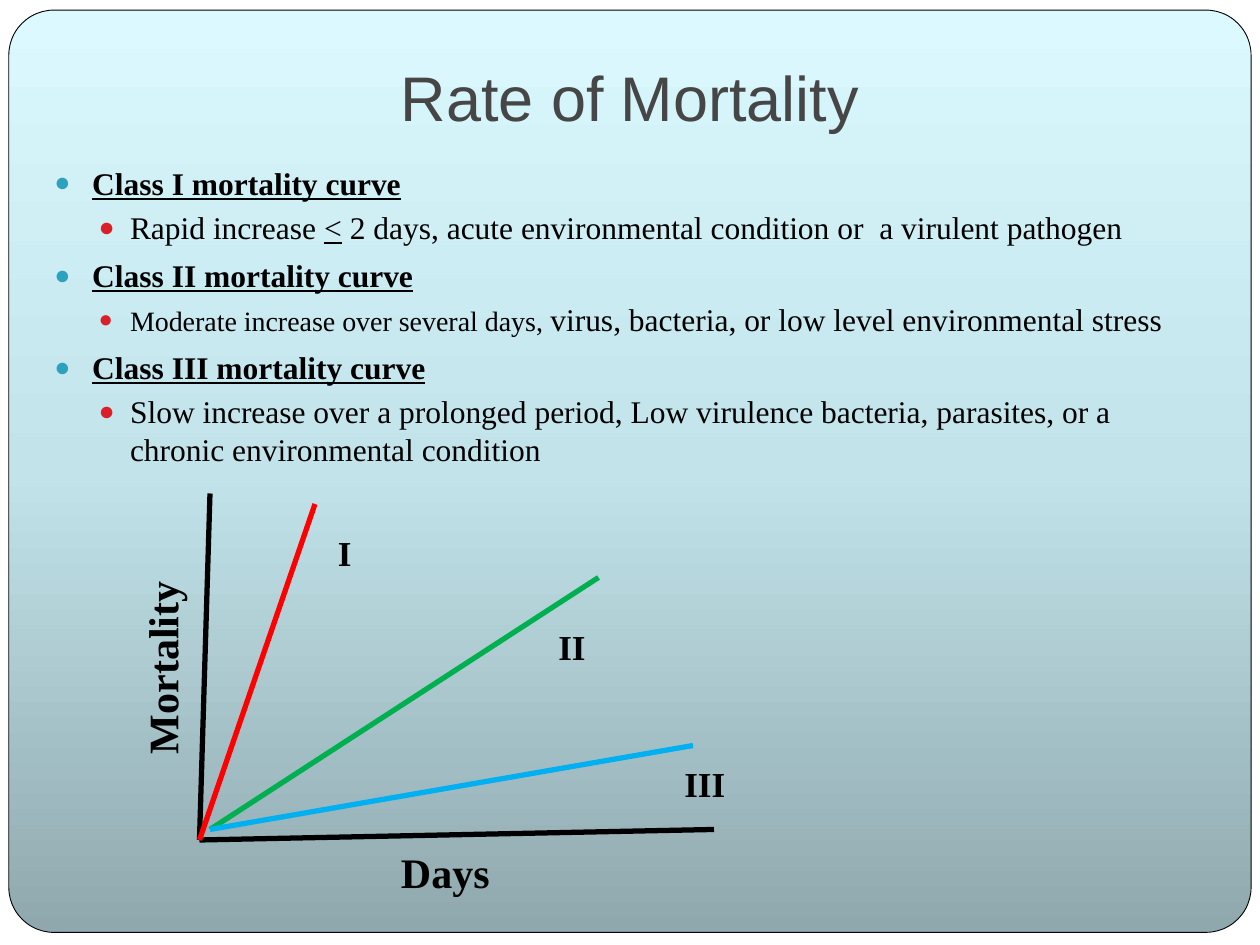
from copy import deepcopy

from lxml.etree import SubElement
from pptx import Presentation
from pptx.dml.color import RGBColor
from pptx.enum.shapes import MSO_CONNECTOR as Link, MSO_SHAPE as Shape
from pptx.enum.text import MSO_ANCHOR as Anchor, MSO_AUTO_SIZE as Auto, PP_ALIGN as Align
from pptx.oxml.ns import qn
from pptx.util import Emu, Inches, Pt

CELL = Inches(1) // 12
SERIF = "Times New Roman"
BLACK = "000000"
FADE = [(0, "8FA8AE"), (0.5, "C2E3EA"), (1, "DBF9FF")]
LEVELS = [(0.3, 0.3, 5.8, "2DA2BF"), (0.6, 0.25, 3.7, "DA1F28")]

NOTES = [
    ("Class I mortality curve",
     [("Rapid increase ", False, 18), ("<", True, 18),
      (" 2 days, acute environmental condition or  a virulent pathogen", False, 18)]),
    ("Class II mortality curve",
     [("Moderate increase over several days, ", False, 16),
      ("virus, bacteria, or low level environmental stress", False, 18)]),
    ("Class III mortality curve",
     [("Slow increase over a prolonged period, Low virulence bacteria, parasites, "
       "or a chronic environmental condition", False, 18)]),
]

LINES = [
    ((19, 80), (20, 47), BLACK),
    ((19, 80), (68, 79), BLACK),
    ((19, 80), (30, 48), "FF0000"),
    ((20, 79), (57, 55), "00B050"),
    ((20, 79), (66, 71), "00B0F0"),
]

LABELS = [
    ("I", (31, 50, 4, 5.3), 20, 0),
    ("II", (52, 59, 5, 5.3), 20, 0),
    ("III", (64, 72, 7, 5.3), 20, 0),
    ("Days", (37, 80, 14, 6), 24, 0),
    ("Mortality", (5.4, 60, 20, 6), 24, 270),
]


def paint(color, tone):
    color.rgb = RGBColor.from_string(tone)


def span(*cells):
    return [Emu(int(cell * CELL)) for cell in cells]


def style(font, size, name=SERIF, tone=BLACK, bold=False):
    font.size, font.name, font.bold = Pt(size), name, bold
    paint(font.color, tone)


def add_card(slide):
    card = slide.shapes.add_shape(
        Shape.ROUNDED_RECTANGLE, Inches(0.07), Inches(0.08), Inches(9.86), Inches(7.32))
    card.adjustments[0] = 0.049
    card.shadow.inherit = False
    paint(card.line.color, BLACK)
    card.line.width = Pt(0.5)
    card.fill.gradient()
    card.fill.gradient_angle = 90
    stops = card.element.spPr.find(".//" + qn("a:gsLst"))
    stops.append(deepcopy(stops[0]))
    for stop, (place, tone) in zip(card.fill.gradient_stops, FADE):
        stop.position = place
        paint(stop.color, tone)
    slide.shapes.element.insert(2, card.element)


def set_title(slide, text):
    title = slide.shapes.title
    title.left, title.top, title.width, title.height = span(8, 5, 104, 9)
    frame = title.text_frame
    frame.text = text
    frame.auto_size = Auto.NONE
    frame.vertical_anchor = Anchor.BOTTOM
    frame.margin_bottom = Inches(0.1)
    para = frame.paragraphs[0]
    para.alignment = Align.CENTER
    style(para.font, 36, "Arial", "464646")


def add_box(slide, cells):
    box = slide.shapes.add_textbox(*span(*cells))
    box.text_frame.word_wrap = True
    return box


def set_bullet(para, level):
    left, hang, gap, tone = LEVELS[level]
    para.level = level
    para.space_before = Pt(gap)
    props = para._p.get_or_add_pPr()
    props.set("marL", str(Inches(left)))
    props.set("indent", str(-Inches(hang)))
    SubElement(SubElement(props, qn("a:buClr")), qn("a:srgbClr"), val=tone)
    SubElement(props, qn("a:buSzPct"), val="85000")
    SubElement(props, qn("a:buFont"), typeface="Arial")
    SubElement(props, qn("a:buChar"), char="●")


def add_notes(slide):
    frame = add_box(slide, (4, 15, 111, 67)).text_frame
    rows = [row for head, runs in NOTES
            for row in ((0, [(head, True, 18)]), (1, runs))]
    for index, (level, runs) in enumerate(rows):
        para = frame.add_paragraph() if index else frame.paragraphs[0]
        set_bullet(para, level)
        if not index:
            para.space_before = Pt(0)
        style(para.font, 18, bold=level == 0)
        for text, under, size in runs:
            run = para.add_run()
            run.text = text
            style(run.font, size, bold=level == 0)
            run.font.underline = under


def add_line(slide, start, end, tone):
    line = slide.shapes.add_connector(Link.STRAIGHT, *span(*start, *end))
    paint(line.line.color, tone)
    line.line.width = Pt(3)
    SubElement(line.element.spPr, qn("a:effectLst"))


def add_label(slide, text, cells, size, turn):
    box = add_box(slide, cells)
    box.rotation = turn
    para = box.text_frame.paragraphs[0]
    para.text = text
    style(para.font, size, bold=True)


def main():
    deck = Presentation()
    deck.slide_width, deck.slide_height = span(120, 90)
    slide = deck.slides.add_slide(deck.slide_layouts[5])
    add_card(slide)
    set_title(slide, "Rate of Mortality")
    add_notes(slide)
    for line in LINES:
        add_line(slide, *line)
    for label in LABELS:
        add_label(slide, *label)
    deck.save("out.pptx")


if __name__ == "__main__":
    main()
